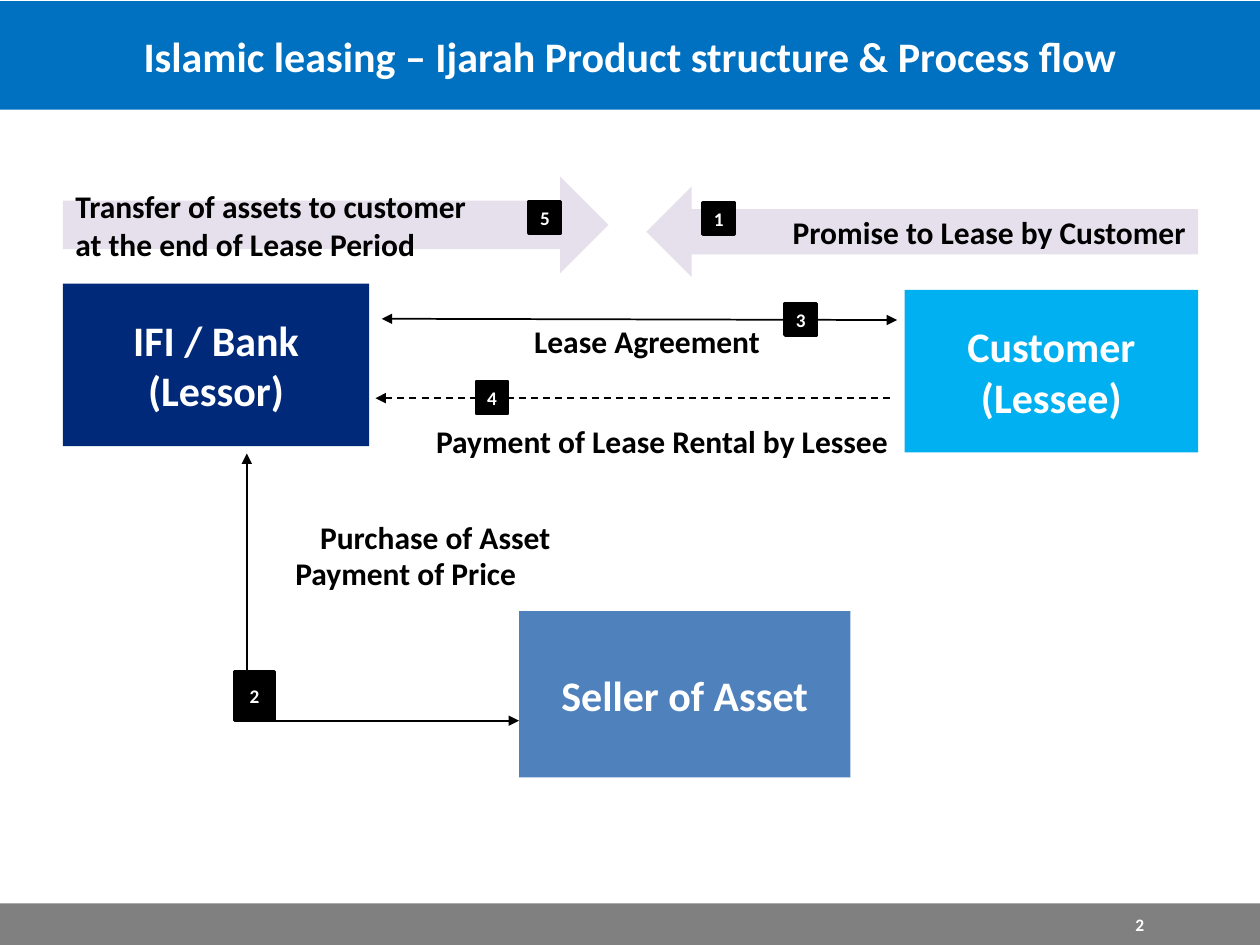
"""Build the Ijarah leasing structure and process flow slide."""
from lxml import etree
from pptx import Presentation
from pptx.dml.color import RGBColor
from pptx.enum.dml import MSO_LINE
from pptx.enum.shapes import MSO_CONNECTOR, MSO_SHAPE
from pptx.enum.text import MSO_ANCHOR, MSO_AUTO_SIZE, PP_ALIGN
from pptx.oxml.ns import qn
from pptx.util import Inches, Pt

RECT, LEFT_ARROW, RIGHT_ARROW = MSO_SHAPE.RECTANGLE, MSO_SHAPE.LEFT_ARROW, MSO_SHAPE.RIGHT_ARROW
LEFT, CENTER, RIGHT = PP_ALIGN.LEFT, PP_ALIGN.CENTER, PP_ALIGN.RIGHT
STRAIGHT, ELBOW = MSO_CONNECTOR.STRAIGHT, MSO_CONNECTOR.ELBOW
MIDDLE, NO_FIT, DASH = MSO_ANCHOR.MIDDLE, MSO_AUTO_SIZE.NONE, MSO_LINE.DASH
TITLE_ONLY = 5
WHITE, BLACK, LILAC = "FFFFFF", "000000", "E6E0EC"


def color(value):
    return RGBColor.from_string(value)


def paint(shape, fill):
    shape.fill.solid()
    shape.fill.fore_color.rgb = color(fill)


def write(shape, text, size=18, ink=BLACK, align=CENTER, wrap=True, font="Calibri"):
    frame = shape.text_frame
    frame.text = text
    frame.word_wrap = wrap
    frame.auto_size = NO_FIT
    frame.vertical_anchor = MIDDLE
    for paragraph in frame.paragraphs:
        paragraph.alignment = align
        paragraph.font.name = font
        paragraph.font.size = Pt(size)
        paragraph.font.bold = True
        paragraph.font.color.rgb = color(ink)


class FlowSlide:
    """Hold the slide and the style of its elements."""

    def __init__(self, slide):
        self.slide = slide
        self.line_width = Pt(1)
        self.badge_border = Pt(2)

    def title(self, text, box, fill):
        banner = self.slide.shapes.title
        banner.left, banner.top, banner.width, banner.height = map(Inches, box)
        paint(banner, fill)
        write(banner, text, size=24, ink=WHITE)

    def block(self, box, fill, text="", kind=RECT, **style):
        shape = self.slide.shapes.add_shape(kind, *map(Inches, box))
        shape.shadow.inherit = False
        paint(shape, fill)
        shape.line.fill.background()
        if text:
            write(shape, text, **style)
        return shape

    def badge(self, number, left, top, width=0.25, height=0.25):
        step = self.block((left, top, width, height), BLACK, number,
                          size=11, ink=WHITE, wrap=False)
        step.line.color.rgb = color(BLACK)
        step.line.width = self.badge_border

    def label(self, text, box, **style):
        write(self.slide.shapes.add_textbox(*map(Inches, box)), text, **style)

    def arrow(self, start, end, heads, kind=STRAIGHT, dash=None):
        connector = self.slide.shapes.add_connector(kind, *map(Inches, start + end))
        connector.line.color.rgb = color(BLACK)
        connector.line.width = self.line_width
        if dash:
            connector.line.dash_style = dash
        properties = connector._element.spPr
        if kind == ELBOW:
            properties.find(qn("a:prstGeom")).set("prst", "bentConnector2")
        outline = properties.find(qn("a:ln"))
        for head in heads:
            etree.SubElement(outline, qn(f"a:{head}"), type="triangle")
        etree.SubElement(properties, qn("a:effectLst"))


def main():
    deck = Presentation()
    deck.slide_width, deck.slide_height = Inches(10), Inches(7.5)
    flow = FlowSlide(deck.slides.add_slide(deck.slide_layouts[TITLE_ONLY]))

    flow.title("Islamic leasing – Ijarah Product structure & Process flow",
               (0, 0.01, 10, 0.86), "0070C0")
    flow.block((0, 7.17, 10, 0.33), "808080")
    flow.label("2", (8.42, 7.21, 1.25, 0.25), size=10, ink=WHITE)

    flow.block((5.13, 1.48, 4.38, 0.72), LILAC, "Promise to Lease by Customer",
               kind=LEFT_ARROW, align=RIGHT)
    flow.block((0.5, 1.4, 4.33, 0.77), LILAC,
               "Transfer of assets to customer\nat the end of Lease Period",
               kind=RIGHT_ARROW, align=LEFT)

    parties = [
        ("IFI / Bank\n(Lessor)", (0.5, 2.25, 2.43, 1.29), "00297A"),
        ("Customer\n(Lessee)", (7.18, 2.3, 2.33, 1.29), "00B0F0"),
        ("Seller of Asset", (4.12, 4.85, 2.63, 1.32), "4F81BD"),
    ]
    for party, box, fill in parties:
        flow.block(box, fill, party, size=24, ink=WHITE)

    both_ends = ("headEnd", "tailEnd")
    flow.arrow((4.12, 5.72), (1.96, 3.6), both_ends, kind=ELBOW)
    flow.arrow((3.03, 2.53), (7.12, 2.54), both_ends)
    flow.arrow((2.98, 3.16), (7.06, 3.16), ("headEnd",), dash=DASH)

    exchanges = [
        ("Purchase of Asset", (2.18, 3.71, 2.55, 1.1)),
        ("Payment of Price", (2.18, 4.44, 2.08, 0.21)),
        ("Lease Agreement", (3.94, 2.55, 2.39, 0.31)),
        ("Payment of Lease Rental by Lessee", (3.33, 3.33, 3.85, 0.34)),
    ]
    for exchange, box in exchanges:
        flow.label(exchange, box)

    flow.badge("1", 5.58, 1.61)
    flow.badge("2", 1.86, 5.33, 0.32, 0.39)
    flow.badge("3", 6.23, 2.41)
    flow.badge("4", 3.78, 3.03)
    flow.badge("5", 4.2, 1.6)

    deck.save("out.pptx")


if __name__ == "__main__":
    main()
